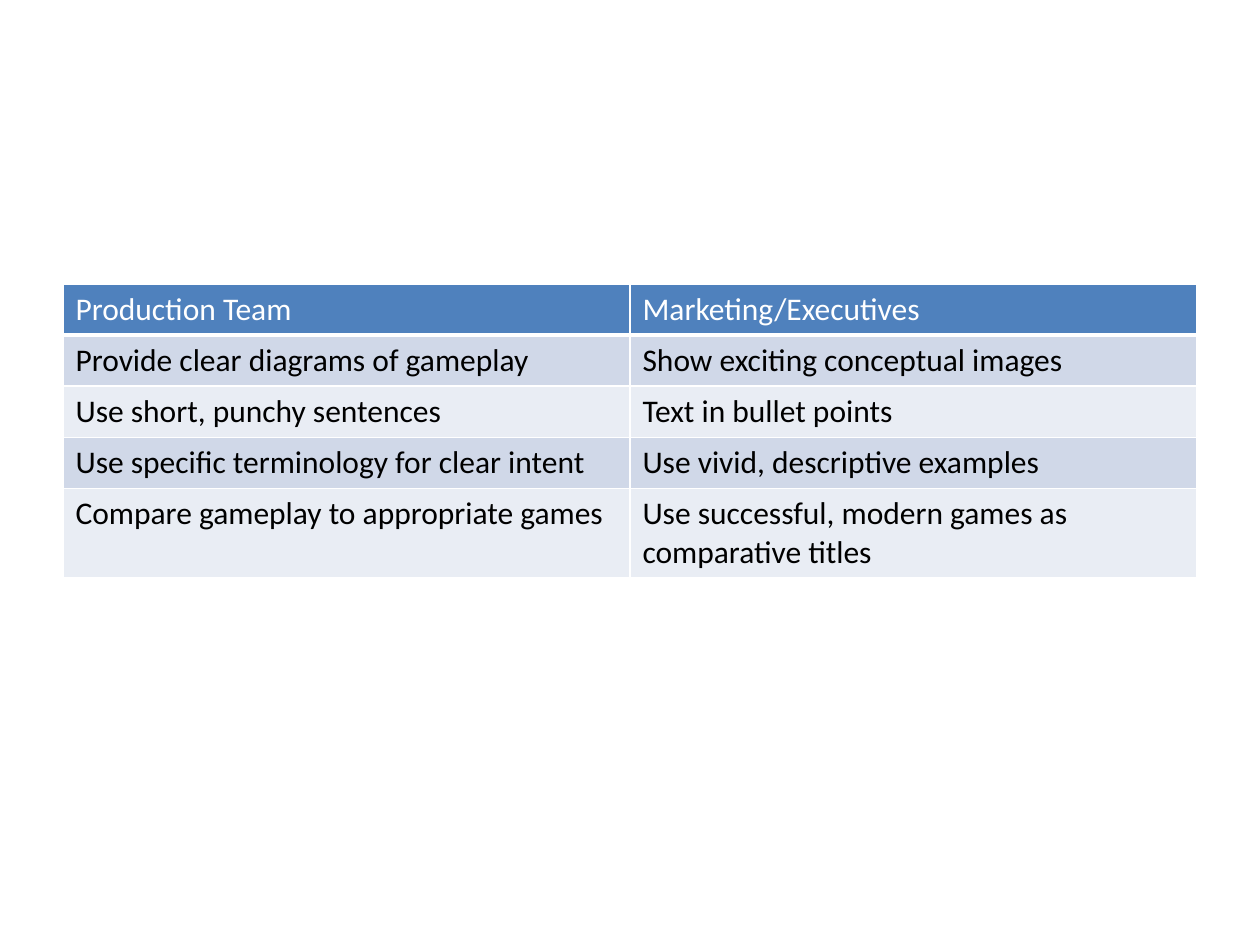
from lxml.etree import SubElement
from pptx import Presentation
from pptx.dml.color import RGBColor
from pptx.oxml.ns import qn
from pptx.util import Pt

EMU_PER_PX = 914400 // 126
HEADER_FILL = "4F81BD"
BAND_FILLS = ["D0D8E8", "E9EDF4"]
ROWS = [
    ("Production Team", "Marketing/Executives"),
    ("Provide clear diagrams of gameplay", "Show exciting conceptual images"),
    ("Use short, punchy sentences", "Text in bullet points"),
    ("Use specific terminology for clear intent", "Use vivid, descriptive examples"),
    ("Compare gameplay to appropriate games",
     "Use successful, modern games as comparative titles"),
]


def px(length):
    return length * EMU_PER_PX


def color(value):
    return RGBColor.from_string(value)


class SlideBuilder:
    font_format = {"name": "Calibri", "size": Pt(18), "bold": False}
    border_color = "FFFFFF"

    def __init__(self, slide):
        self.slide = slide

    def borders(self, cell, bottom):
        properties = cell._tc.get_or_add_tcPr()
        for side, points in {"L": 1, "R": 1, "T": 1, "B": bottom}.items():
            line = SubElement(properties, qn(f"a:ln{side}"), w=str(Pt(points)))
            fill = SubElement(line, qn("a:solidFill"))
            SubElement(fill, qn("a:srgbClr"), val=self.border_color)

    def cell(self, cell, text, fill, text_color, bottom):
        self.borders(cell, bottom)
        cell.fill.solid()
        cell.fill.fore_color.rgb = color(fill)
        cell.text = text
        font = cell.text_frame.paragraphs[0].runs[0].font
        for name, value in self.font_format.items():
            setattr(font, name, value)
        font.color.rgb = color(text_color)

    def table(self, rows, left, top, width, row_height):
        shape = self.slide.shapes.add_table(
            len(rows), len(rows[0]), px(left), px(top),
            px(width), px(row_height * len(rows)))
        table = shape.table
        for index, texts in enumerate(rows):
            table.rows[index].height = px(row_height)
            if index == 0:
                style = (HEADER_FILL, "FFFFFF", 3)
            else:
                style = (BAND_FILLS[(index - 1) % 2], "000000", 1)
            for cell, text in zip(table.rows[index].cells, texts):
                self.cell(cell, text, *style)


def main():
    presentation = Presentation()
    presentation.slide_width = px(1260)
    presentation.slide_height = px(945)
    slide = presentation.slides.add_slide(presentation.slide_layouts[6])
    SlideBuilder(slide).table(ROWS, left=63, top=284, width=1134, row_height=51)
    presentation.save("out.pptx")


if __name__ == "__main__":
    main()
